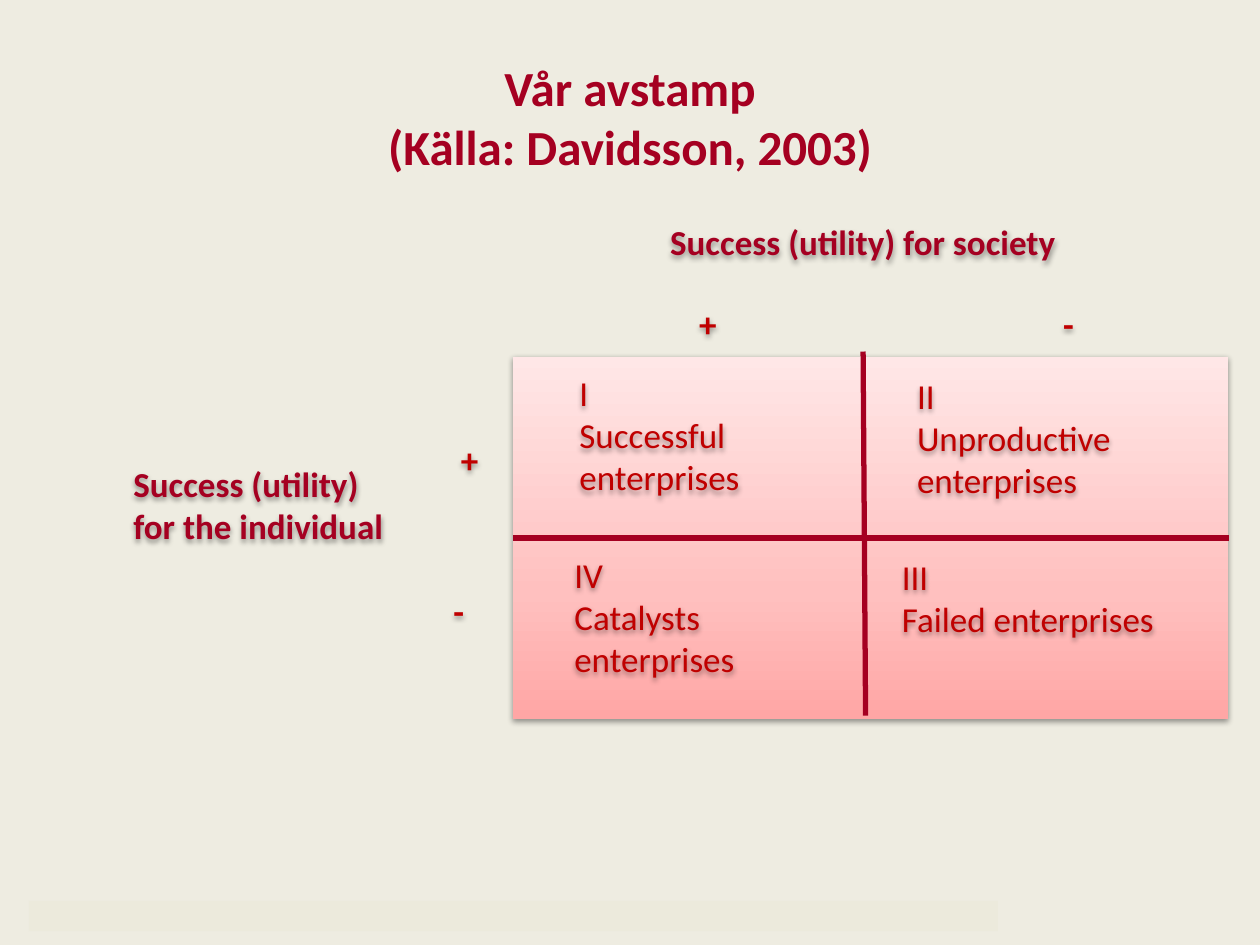
from copy import deepcopy
from dataclasses import dataclass

from lxml.etree import SubElement
from pptx import Presentation
from pptx.dml.color import RGBColor as Color
from pptx.enum.shapes import MSO_CONNECTOR as Connector, MSO_SHAPE as ShapeKind
from pptx.enum.text import MSO_ANCHOR as Anchor, MSO_AUTO_SIZE as AutoSize, PP_ALIGN as Align
from pptx.oxml.ns import qn
from pptx.util import Emu, Inches, Pt


@dataclass(frozen=True)
class Theme:
    font: str = "Calibri"
    title_size: int = 28
    body_size: int = 20
    line_width: int = 3
    background: str = "EEECE1"
    heading: str = "A50021"
    body: str = "C00000"
    footer: str = "ECEADC"
    gradient: tuple = ((0, "FFA6A5"), (0.35, "FFC0BF"), (1, "FFE7E7"))


@dataclass(frozen=True)
class Box:
    column: float
    row: float
    columns: float
    rows: float

    def place(self) -> tuple[Emu, ...]:
        return tuple(grid(value) for value in (self.column, self.row, self.columns, self.rows))


@dataclass(frozen=True)
class Label:
    box: Box
    lines: tuple[str, ...]
    color: str
    bold: bool = True


THEME = Theme()
COLUMNS, ROWS = 100, 75
MATRIX = Box(40.7, 28.3, 56.8, 28.8)
FOOTER = Box(2.3, 71.5, 76.9, 2.4)
TITLE = Box(5, 3, 90, 12.5)
TITLE_LINES = ("Vår avstamp", "(Källa: Davidsson, 2003)")
MIDDLE_ROW = MATRIX.row + MATRIX.rows / 2
DIVIDERS = (
    (68.5, 27.9, 68.7, 56.8),
    (MATRIX.column, MIDDLE_ROW, MATRIX.column + MATRIX.columns, MIDDLE_ROW),
)
QUADRANTS = [
    Label(Box(45, 29, 15.1, 11.8), ("I", "Successful", "enterprises"), THEME.body, False),
    Label(Box(70.6, 43.6, 22.6, 8.2), ("III", "Failed enterprises"), THEME.body, False),
    Label(Box(71.8, 29.2, 18.4, 11.8), ("II", "Unproductive", "enterprises"), THEME.body, False),
    Label(Box(44.6, 43.4, 15.1, 11.8), ("IV", "Catalysts", "enterprises"), THEME.body, False),
]
AXES = [
    Label(Box(52.2, 17, 32.9, 4.4), ("Success (utility) for society",), THEME.heading),
    Label(Box(9.6, 36.2, 22, 7.7), ("Success (utility)", "for the individual"), THEME.heading),
]
SIGNS = [
    Label(Box(column, row, 3.5 if sign == "+" else 3, 4.7), (sign,), THEME.body)
    for column, row, sign in ((54.5, 23.5, "+"), (83.4, 23.5, "-"), (35.6, 34.3, "+"), (35, 46.3, "-"))
]


def grid(units: float) -> Emu:
    return Inches(units * 10 / COLUMNS)


def apply(target, values: dict) -> None:
    for name, value in values.items():
        setattr(target, name, value)


def move(shape, box: Box) -> None:
    apply(shape, dict(zip(("left", "top", "width", "height"), box.place())))


def write(text_frame, lines: tuple[str, ...], size: int, color: str, bold: bool, alignment: Align) -> None:
    text_frame.text = "\n".join(lines)
    for paragraph in text_frame.paragraphs:
        paragraph.alignment = alignment
        for run in paragraph.runs:
            apply(run.font, {"name": THEME.font, "size": Pt(size), "bold": bold})
            run.font.color.rgb = Color.from_string(color)


def set_shadow(shape, visible: bool) -> None:
    effects = SubElement(shape._element.spPr, qn("a:effectLst"))
    if visible:
        shadow = SubElement(
            effects, qn("a:outerShdw"),
            blurRad=str(Pt(3.1)), dist=str(Pt(1.6)), dir="5400000", rotWithShape="0",
        )
        color = SubElement(shadow, qn("a:srgbClr"), val="000000")
        SubElement(color, qn("a:alpha"), val="38000")


def add_rectangle(slide, box: Box):
    shape = slide.shapes.add_shape(ShapeKind.RECTANGLE, *box.place())
    shape.line.fill.background()
    return shape


def add_matrix(slide) -> None:
    shape = add_rectangle(slide, MATRIX)
    shape.fill.gradient()
    shape.fill.gradient_angle = 90
    stops = shape._element.spPr.find(".//" + qn("a:gsLst"))
    stops.append(deepcopy(stops[-1]))
    for stop, (position, color) in zip(shape.fill.gradient_stops, THEME.gradient):
        stop.position = position
        stop.color.rgb = Color.from_string(color)
    set_shadow(shape, True)


def add_footer(slide) -> None:
    shape = add_rectangle(slide, FOOTER)
    shape.fill.solid()
    shape.fill.fore_color.rgb = Color.from_string(THEME.footer)
    set_shadow(shape, False)


def add_label(slide, label: Label) -> None:
    shape = slide.shapes.add_textbox(*label.box.place())
    apply(shape.text_frame, {"word_wrap": False, "auto_size": AutoSize.SHAPE_TO_FIT_TEXT})
    write(shape.text_frame, label.lines, THEME.body_size, label.color, label.bold, Align.LEFT)
    set_shadow(shape, True)


def add_divider(slide, ends: tuple[float, ...]) -> None:
    connector = slide.shapes.add_connector(Connector.STRAIGHT, *map(grid, ends))
    connector.line.color.rgb = Color.from_string(THEME.heading)
    connector.line.width = Pt(THEME.line_width)
    set_shadow(connector, False)


def add_title(slide) -> None:
    title = slide.shapes.title
    move(title, TITLE)
    apply(title.text_frame, {"vertical_anchor": Anchor.MIDDLE, "auto_size": AutoSize.NONE})
    write(title.text_frame, TITLE_LINES, THEME.title_size, THEME.heading, True, Align.CENTER)


def main() -> None:
    presentation = Presentation()
    apply(presentation, {"slide_width": grid(COLUMNS), "slide_height": grid(ROWS)})
    slide = presentation.slides.add_slide(presentation.slide_layouts[5])
    slide.background.fill.solid()
    slide.background.fill.fore_color.rgb = Color.from_string(THEME.background)
    add_title(slide)
    add_matrix(slide)
    for label in QUADRANTS + AXES + SIGNS:
        add_label(slide, label)
    add_footer(slide)
    for ends in DIVIDERS:
        add_divider(slide, ends)
    presentation.save("out.pptx")


if __name__ == "__main__":
    main()
